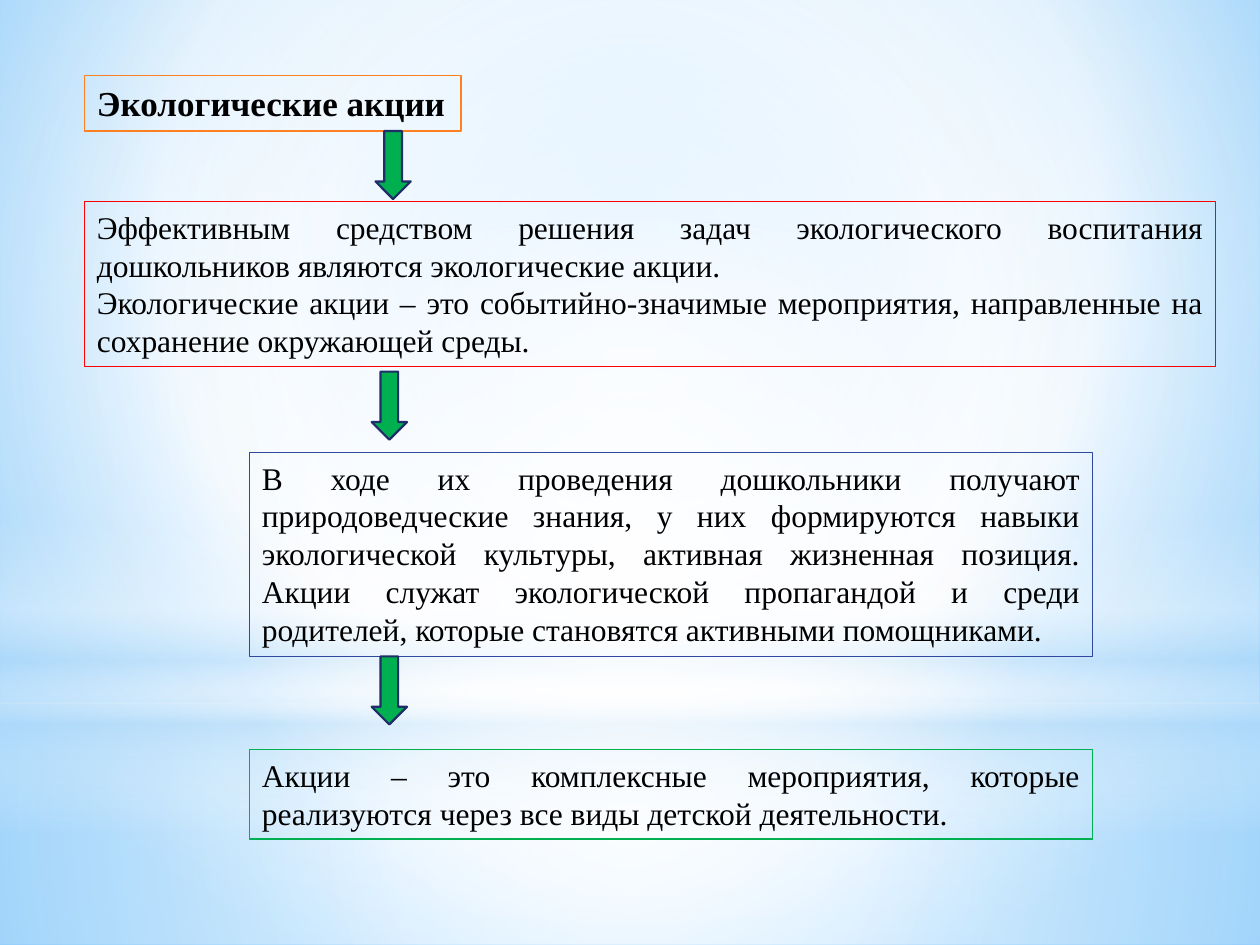
from dataclasses import dataclass
from typing import Any, Optional

import pptx
import pptx.dml.color
import pptx.enum.shapes
import pptx.enum.text
import pptx.oxml.ns
import pptx.util
from lxml import etree
from pptx.util import Inches

qn = pptx.oxml.ns.qn
SHAPES = pptx.enum.shapes.MSO_SHAPE
ALIGN = pptx.enum.text.PP_ALIGN


@dataclass(frozen=True)
class Theme:
    font: str = "Times New Roman"
    title_size: int = 20
    body_size: int = 18
    text: str = "000000"
    arrow_fill: str = "00B050"
    arrow_line: str = "1F2E69"
    title_line: str = "FF8021"
    definition_line: str = "FF0000"
    results_line: str = "31489F"
    summary_line: str = "00B050"
    white: str = "FFFFFF"
    haze: str = "B4DCFA"
    sky: str = "9ED5FF"
    deep_sky: str = "5BB9FF"


@dataclass(frozen=True)
class Stop:
    position: int
    color: str
    opacity: int = 100


@dataclass(frozen=True)
class Gradient:
    """Circular around the focus insets (left, top, right, bottom), or downward without them."""
    stops: tuple[Stop, ...]
    focus: Optional[tuple[int, int, int, int]] = (50, 50, 50, 50)


@dataclass(frozen=True)
class Glow:
    preset: Any
    top: float
    height: float
    gradient: Gradient


@dataclass(frozen=True)
class TextBox:
    left: float
    top: float
    width: float
    height: float
    line: str
    paragraphs: tuple[str, ...]
    is_title: bool = False


@dataclass(frozen=True)
class Arrow:
    left: float
    top: float


THEME = Theme()
ARROW_WIDTH, ARROW_HEIGHT = 0.28, 0.54
SLIDE_WIDTH, SLIDE_HEIGHT = 10, 7.5

BACKGROUND = Gradient(
    (Stop(0, THEME.sky), Stop(60, THEME.white), Stop(100, THEME.deep_sky)),
    (20, 10, 20, 60))

GLOWS = (
    Glow(SHAPES.RECTANGLE, 5.58, 1.92, Gradient((
        Stop(0, THEME.white, 91), Stop(37, THEME.white, 76), Stop(100, THEME.haze, 79)))),
    Glow(SHAPES.RECTANGLE, 0, 5.58, Gradient((
        Stop(0, THEME.white, 89), Stop(48, THEME.white, 62), Stop(100, THEME.haze, 79)))),
    Glow(SHAPES.RECTANGLE, 4.12, 2.5, Gradient((
        Stop(0, THEME.white, 0), Stop(29, THEME.white, 30), Stop(45, THEME.haze, 40),
        Stop(55, THEME.white, 26), Stop(65, THEME.haze, 60), Stop(100, THEME.white, 0)), None)),
    Glow(SHAPES.OVAL, 1.75, 5.58, Gradient((
        Stop(0, THEME.white), Stop(56, THEME.white, 0)))),
)

TEXT_BOXES = (
    TextBox(0.67, 0.6, 2.99, 0.44, THEME.title_line, ("Экологические акции",), True),
    TextBox(0.67, 1.6, 8.98, 1.31, THEME.definition_line, (
        "Эффективным средством решения задач экологического воспитания дошкольников "
        "являются экологические акции. ",
        "Экологические акции – это событийно-значимые мероприятия, направленные на "
        "сохранение окружающей среды. ")),
    TextBox(1.98, 3.59, 6.69, 1.62, THEME.results_line, (
        "В ходе их проведения дошкольники получают природоведческие знания, у них "
        "формируются навыки экологической культуры, активная жизненная позиция. Акции "
        "служат экологической пропагандой и среди родителей, которые становятся "
        "активными помощниками.",)),
    TextBox(1.98, 5.95, 6.69, 0.71, THEME.summary_line, (
        "Акции – это комплексные мероприятия, которые реализуются через все виды "
        "детской деятельности.",)),
)

ARROWS = (Arrow(2.98, 1.04), Arrow(2.95, 2.95), Arrow(2.95, 5.21))


def rgb(color: str) -> pptx.dml.color.RGBColor:
    return pptx.dml.color.RGBColor.from_string(color)


def apply_gradient(fill: Any, owner: Any, gradient: Gradient) -> None:
    """Fill the owner element with stops that carry opacity and a circular path."""
    fill.gradient()
    element = next(owner.iter(qn("a:gradFill")))
    element.clear()
    element.set("rotWithShape", "1")
    stop_list = etree.SubElement(element, qn("a:gsLst"))
    for stop in gradient.stops:
        node = etree.SubElement(stop_list, qn("a:gs"), pos=str(stop.position * 1000))
        color = etree.SubElement(node, qn("a:srgbClr"), val=stop.color)
        if stop.opacity < 100:
            etree.SubElement(color, qn("a:alpha"), val=str(stop.opacity * 1000))
    if gradient.focus is None:
        etree.SubElement(element, qn("a:lin"), ang=str(90 * 60000), scaled="0")
        return
    circle = etree.SubElement(element, qn("a:path"), path="circle")
    insets = {side: str(inset * 1000) for side, inset in zip("ltrb", gradient.focus)}
    etree.SubElement(circle, qn("a:fillToRect"), insets)


def draw_glow(slide: Any, glow: Glow) -> None:
    shape = slide.shapes.add_shape(
        glow.preset, 0, Inches(glow.top), Inches(SLIDE_WIDTH), Inches(glow.height))
    shape.shadow.inherit = False
    shape.line.fill.background()
    apply_gradient(shape.fill, shape._element.spPr, glow.gradient)


def draw_text_box(slide: Any, box: TextBox) -> None:
    shape = slide.shapes.add_textbox(
        Inches(box.left), Inches(box.top), Inches(box.width), Inches(box.height))
    shape.line.color.rgb = rgb(box.line)
    shape.line.width = pptx.util.Pt(0.75)
    frame = shape.text_frame
    frame.word_wrap = not box.is_title
    frame.auto_size = pptx.enum.text.MSO_AUTO_SIZE.SHAPE_TO_FIT_TEXT
    for index, text in enumerate(box.paragraphs):
        paragraph = frame.add_paragraph() if index else frame.paragraphs[0]
        paragraph.alignment = ALIGN.LEFT if box.is_title else ALIGN.JUSTIFY
        run = paragraph.add_run()
        run.text = text
        run.font.name = THEME.font
        run.font.size = pptx.util.Pt(THEME.title_size if box.is_title else THEME.body_size)
        run.font.bold = box.is_title
        run.font.color.rgb = rgb(THEME.text)


def draw_arrow(slide: Any, arrow: Arrow) -> None:
    shape = slide.shapes.add_shape(
        SHAPES.DOWN_ARROW, Inches(arrow.left), Inches(arrow.top),
        Inches(ARROW_WIDTH), Inches(ARROW_HEIGHT))
    shape.shadow.inherit = False
    shape.fill.solid()
    shape.fill.fore_color.rgb = rgb(THEME.arrow_fill)
    shape.line.color.rgb = rgb(THEME.arrow_line)
    shape.line.width = pptx.util.Pt(1.25)


def main() -> None:
    presentation = pptx.Presentation()
    presentation.slide_width = Inches(SLIDE_WIDTH)
    presentation.slide_height = Inches(SLIDE_HEIGHT)
    slide = presentation.slides.add_slide(presentation.slide_layouts[6])
    apply_gradient(slide.background.fill, slide._element, BACKGROUND)
    for glow in GLOWS:
        draw_glow(slide, glow)
    for box in TEXT_BOXES:
        draw_text_box(slide, box)
    for arrow in ARROWS:
        draw_arrow(slide, arrow)
    presentation.save("out.pptx")


if __name__ == "__main__":
    main()
